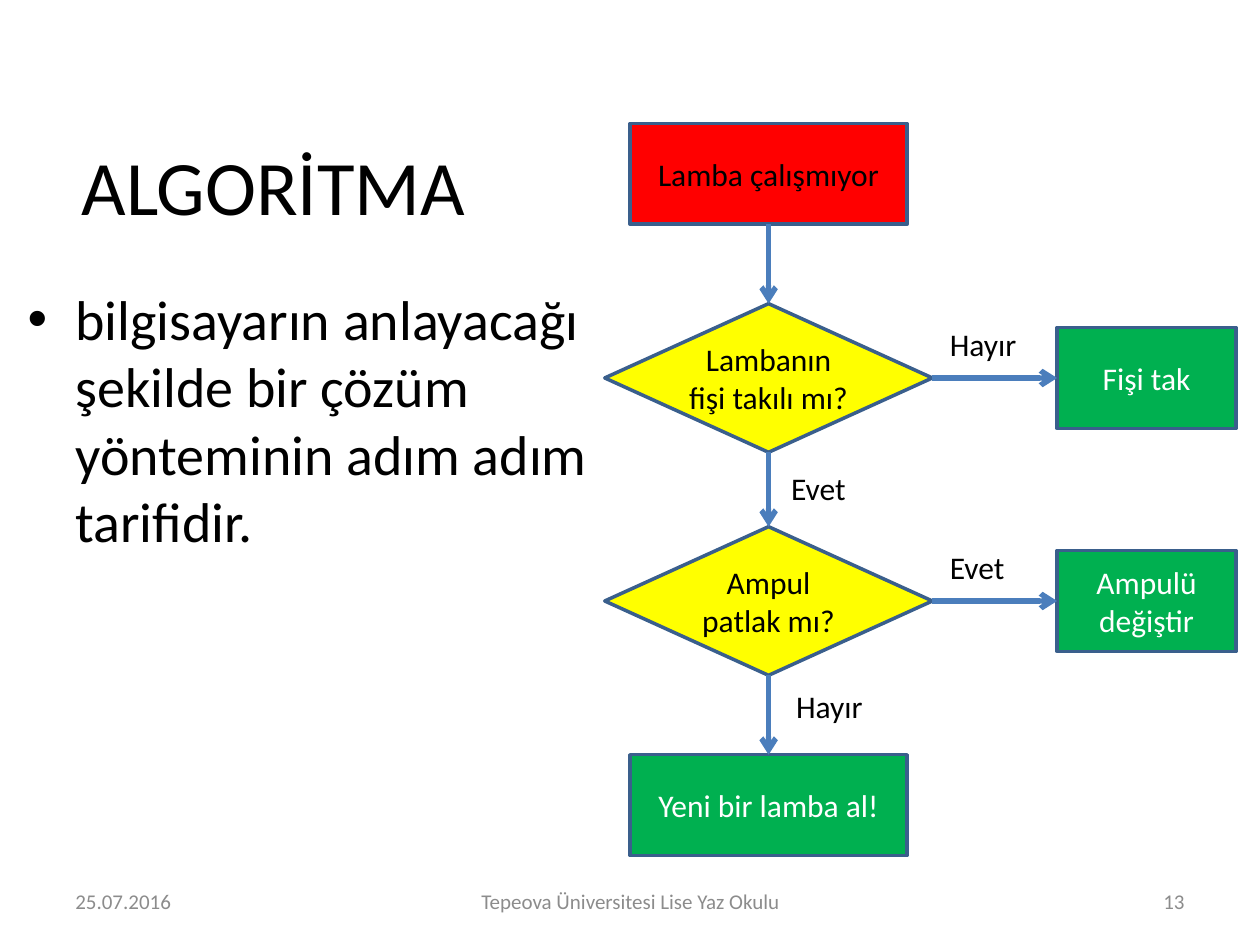
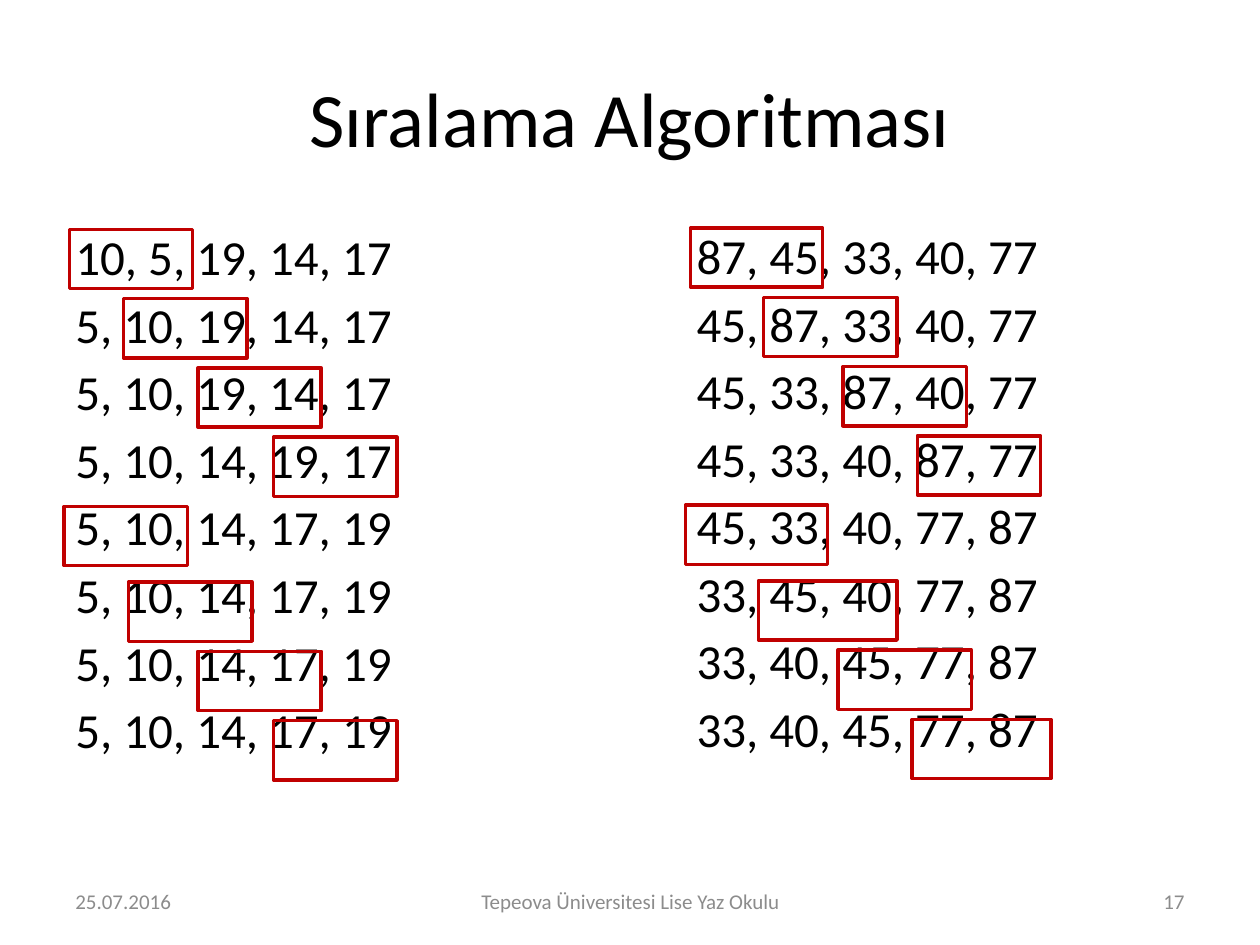
from dataclasses import dataclass

from lxml import etree
from pptx import Presentation
from pptx.dml.color import RGBColor
from pptx.enum import shapes, text
from pptx.oxml.ns import qn
from pptx.util import Pt

EMU_PER_PX = 9144  # 100 px to the inch
TOP, LEFT, BOTTOM, RIGHT = range(4)  # connection sites


@dataclass(frozen=True)
class Theme:
    font: str = "Calibri"
    title_size: int = 44
    body_size: int = 32
    list_size: int = 28
    label_size: int = 18
    footer_size: int = 12
    black: str = "000000"
    white: str = "FFFFFF"
    grey: str = "8C8C8C"
    red: str = "FF0000"
    yellow: str = "FFFF00"
    green: str = "00B050"
    outline: str = "3A5F8C"
    arrow: str = "4B7EBC"
    highlight: str = "C00000"


THEME = Theme()


def px(*lengths):
    return [round(length * EMU_PER_PX) for length in lengths]


def rgb(code):
    return RGBColor.from_string(code)


class Deck:
    """Holds the theme and the current slide."""

    def __init__(self, theme):
        self.theme = theme
        self.presentation = Presentation()
        self.presentation.slide_width, self.presentation.slide_height = px(1000, 750)
        self.slide = None

    def new_slide(self, number):
        self.slide = self.presentation.slides.add_slide(self.presentation.slide_layouts[6])
        footers = (
            (50, 233, "25.07.2016", text.PP_ALIGN.LEFT),
            (342, 317, "Tepeova Üniversitesi Lise Yaz Okulu", text.PP_ALIGN.CENTER),
            (717, 233, str(number), text.PP_ALIGN.RIGHT),
        )
        for left, width, words, align in footers:
            self.textbox((left, 695, width, 40), [words], self.theme.footer_size,
                         self.theme.grey, align, text.MSO_ANCHOR.MIDDLE)

    def fill_text(self, frame, lines, size, color, align, gap=0):
        for index, line in enumerate(lines):
            paragraph = frame.add_paragraph() if index else frame.paragraphs[0]
            paragraph.text = line
            paragraph.alignment = align
            paragraph.space_before = Pt(gap)
            paragraph.font.name = self.theme.font
            paragraph.font.size = Pt(size)
            paragraph.font.color.rgb = rgb(color)

    def textbox(self, box, lines, size, color=THEME.black, align=text.PP_ALIGN.LEFT,
                anchor=text.MSO_ANCHOR.TOP, gap=0):
        frame = self.slide.shapes.add_textbox(*px(*box)).text_frame
        frame.word_wrap = True
        frame.vertical_anchor = anchor
        self.fill_text(frame, lines, size, color, align, gap)
        return frame

    def title(self, words, box, align):
        self.textbox(box, [words], self.theme.title_size, align=align,
                     anchor=text.MSO_ANCHOR.MIDDLE)

    def bullet(self, words, box):
        frame = self.textbox(box, [words], self.theme.body_size, gap=6)
        properties = frame.paragraphs[0]._p.get_or_add_pPr()
        indent, = px(38)
        properties.set("marL", str(indent))
        properties.set("indent", str(-indent))
        etree.SubElement(properties, qn("a:buFont"), typeface="Arial")
        etree.SubElement(properties, qn("a:buChar"), char="•")

    def label(self, words, left, top, width):
        frame = self.textbox((left, top, width, 40), [words], self.theme.label_size)
        frame.word_wrap = False
        frame.auto_size = text.MSO_AUTO_SIZE.SHAPE_TO_FIT_TEXT

    def outlined(self, kind, box, line):
        shape = self.slide.shapes.add_shape(kind, *px(*box))
        shape.shadow.inherit = False
        shape.fill.background()
        shape.line.color.rgb = rgb(line)
        shape.line.width = Pt(2)
        return shape

    def node(self, kind, words, center, size, fill, color):
        (x, y), (width, height) = center, size
        box = (x - width / 2, y - height / 2, width, height)
        shape = self.outlined(kind, box, self.theme.outline)
        shape.fill.solid()
        shape.fill.fore_color.rgb = rgb(fill)
        frame = shape.text_frame
        frame.word_wrap = True
        frame.vertical_anchor = text.MSO_ANCHOR.MIDDLE
        self.fill_text(frame, [words], self.theme.label_size, color, text.PP_ALIGN.CENTER)
        return shape

    def process(self, words, center, width, fill, color=THEME.white):
        return self.node(shapes.MSO_SHAPE.FLOWCHART_PROCESS, words, center,
                         (width, 80), fill, color)

    def decision(self, words, center):
        shape = self.node(shapes.MSO_SHAPE.FLOWCHART_DECISION, words, center,
                          (260, 118), self.theme.yellow, self.theme.black)
        frame = shape.text_frame
        frame.margin_left = frame.margin_right = frame.margin_top = frame.margin_bottom = 0
        return shape

    def arrow(self, start, start_site, end, end_site):
        connector = self.slide.shapes.add_connector(shapes.MSO_CONNECTOR.STRAIGHT, 0, 0, 0, 0)
        connector.begin_connect(start, start_site)
        connector.end_connect(end, end_site)
        connector.line.color.rgb = rgb(self.theme.arrow)
        connector.line.width = Pt(3)
        properties = connector.element.spPr
        etree.SubElement(properties.find(qn("a:ln")), qn("a:tailEnd"), type="arrow")
        etree.SubElement(properties, qn("a:effectLst"))


def bubble_steps(numbers, passes=2):
    """List the numbers as they stand before each comparison."""
    numbers, steps = list(numbers), []
    for _ in range(passes):
        for i in range(len(numbers) - 1):
            steps.append(", ".join(map(str, numbers)))
            numbers[i:i + 2] = sorted(numbers[i:i + 2])
    return steps


def algorithm_slide(deck):
    theme = deck.theme
    deck.new_slide(13)
    deck.title("ALGORİTMA", (55, 84, 560, 125), text.PP_ALIGN.LEFT)
    deck.bullet("bilgisayarın anlayacağı şekilde bir çözüm yönteminin adım adım tarifidir.",
                (12, 221, 481, 449))

    # Flowchart nodes
    main_x, side_x = 610, 910
    plug_y, bulb_y = 300, 477
    broken = deck.process("Lamba çalışmıyor", (main_x, 138), 220, theme.red, theme.black)
    plugged = deck.decision("Lambanın fişi takılı mı?", (main_x, plug_y))
    burnt = deck.decision("Ampul patlak mı?", (main_x, bulb_y))
    buy = deck.process("Yeni bir lamba al!", (main_x, 639), 220, theme.green)
    plug_in = deck.process("Fişi tak", (side_x, plug_y), 142, theme.green)
    new_bulb = deck.process("Ampulü değiştir", (side_x, bulb_y), 142, theme.green)

    # Arrows and answers
    for upper, lower in ((broken, plugged), (plugged, burnt), (burnt, buy)):
        deck.arrow(upper, BOTTOM, lower, TOP)
    for question, action in ((plugged, plug_in), (burnt, new_bulb)):
        deck.arrow(question, RIGHT, action, LEFT)
    deck.label("Hayır", 744, 253, 74)
    deck.label("Evet", 744, 430, 64)
    deck.label("Evet", 618, 367, 64)
    deck.label("Hayır", 622, 540, 74)


def sorting_slide(deck):
    deck.new_slide(17)
    deck.title("Sıralama Algoritması", (50, 30, 900, 125), text.PP_ALIGN.CENTER)

    # Each column: left, top, numbers, (left, width) of the compared pairs
    columns = (
        (50, 175, (10, 5, 19, 14, 17),
         [(left, 98) for left in (55, 98, 157, 217, 51, 102, 157, 217)]),
        (543, 174, (87, 45, 33, 40, 77),
         [(548, 105), (606, 106), (669, 98), (728, 98),
          (544, 113), (602, 110), (665, 106), (724, 110)]),
    )
    for left, top, numbers, pairs in columns:
        deck.textbox((left, top, 352, 515), bubble_steps(numbers), deck.theme.list_size, gap=5)
        for row, (pair_left, width) in enumerate(pairs):
            pair_top = top + 7 + 55 * row + (5 if row > 4 else 0)
            deck.outlined(shapes.MSO_SHAPE.RECTANGLE, (pair_left, pair_top, width, 47),
                          deck.theme.highlight)


def main():
    deck = Deck(THEME)
    algorithm_slide(deck)
    sorting_slide(deck)
    deck.presentation.save("out.pptx")


if __name__ == "__main__":
    main()
